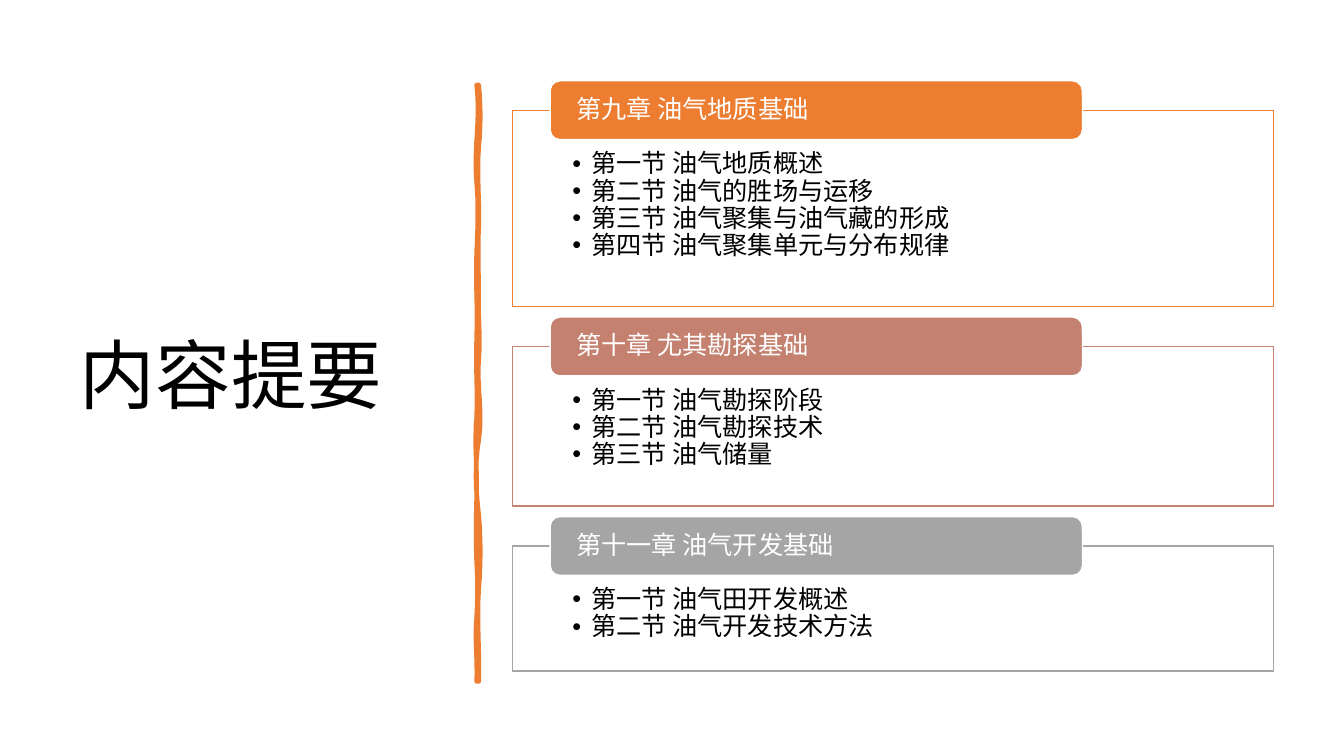
"""Build the contents slide: a title, a wavy divider and three chapter panels."""
from dataclasses import dataclass

from lxml.etree import SubElement
from pptx import Presentation
from pptx.dml.color import RGBColor
from pptx.enum.shapes import MSO_SHAPE as Preset
from pptx.enum.text import MSO_ANCHOR as Anchor, MSO_AUTO_SIZE as AutoSize, PP_ALIGN as Align
from pptx.oxml.ns import qn
from pptx.shapes.base import BaseShape
from pptx.slide import Slide
from pptx.text.text import TextFrame, _Paragraph as Paragraph
from pptx.util import Pt

PX = 9525
FINE = 10
FONT = "Noto Sans CJK SC"
ORANGE = RGBColor(0xED, 0x7D, 0x31)
ROSE = RGBColor(0xC4, 0x81, 0x70)
GRAY = RGBColor(0xA5, 0xA5, 0xA5)
WHITE = RGBColor(0xFF, 0xFF, 0xFF)
BLACK = RGBColor(0x00, 0x00, 0x00)

PANEL_LEFT, PANEL_WIDTH, FIRST_TOP, PANEL_GAP = 488, 725, 105, 38
TAB_LEFT, TAB_WIDTH, TAB_HEIGHT = 524, 507, 56
BULLET_INDENT = 18


@dataclass(frozen=True)
class Chapter:
    heading: str
    sections: tuple[str, ...]
    height: int
    color: RGBColor


@dataclass(frozen=True)
class Wave:
    first_bow: int
    second_bow: int
    end_y: int


CHAPTERS = (
    Chapter("第九章 油气地质基础",
            ("第一节 油气地质概述", "第二节 油气的胜场与运移",
             "第三节 油气聚集与油气藏的形成", "第四节 油气聚集单元与分布规律"), 187, ORANGE),
    Chapter("第十章 尤其勘探基础",
            ("第一节 油气勘探阶段", "第二节 油气勘探技术", "第三节 油气储量"), 152, ROSE),
    Chapter("第十一章 油气开发基础",
            ("第一节 油气田开发概述", "第二节 油气开发技术方法"), 119, GRAY),
)

DIVIDER_TOP, DIVIDER_BOTTOM = 81, 649
RIGHT_X, LEFT_X = 456, 454
RIGHT_EDGE = (Wave(2, 2, 140), Wave(-2, 1, 217), Wave(-1, 0, 282), Wave(-1, 2, 342),
              Wave(-2, 4, 419), Wave(-4, -3, 490), Wave(2, 2, 561), Wave(-2, 1, DIVIDER_BOTTOM))
LEFT_EDGE = (Wave(1, -2, 588), Wave(1, 1, 535), Wave(-1, 0, 458), Wave(0, -2, 398),
             Wave(1, -1, 322), Wave(1, -1, 240), Wave(1, 2, 174), Wave(-3, 4, DIVIDER_TOP))


def place(shape: BaseShape, left: int, top: int, width: int, height: int) -> None:
    """Position a shape in px."""
    shape.left, shape.top = left * PX, top * PX
    shape.width, shape.height = width * PX, height * PX


def set_frame(frame: TextFrame, anchor: Anchor, left: int, top: int, right: int, bottom: int) -> None:
    """Set wrapping, anchor and insets of a text frame."""
    frame.word_wrap = True
    frame.auto_size = AutoSize.NONE
    frame.vertical_anchor = anchor
    frame.margin_left, frame.margin_top = left * PX, top * PX
    frame.margin_right, frame.margin_bottom = right * PX, bottom * PX


def write(paragraph: Paragraph, text: str, size: int, color: RGBColor) -> None:
    """Add one formatted run to a left-aligned paragraph."""
    paragraph.alignment = Align.LEFT
    paragraph.line_spacing = 0.9
    paragraph.space_before = paragraph.space_after = Pt(0)
    run = paragraph.add_run()
    run.text = text
    run.font.size = Pt(size)
    run.font.bold = False
    run.font.color.rgb = color
    run.font.name = FONT
    SubElement(run.font._element, qn("a:ea"), typeface=FONT)


def add_bullet(paragraph: Paragraph) -> None:
    """Give a paragraph a hanging round bullet."""
    properties = paragraph._p.get_or_add_pPr()
    properties.set("marL", str(BULLET_INDENT * PX))
    properties.set("indent", str(-BULLET_INDENT * PX))
    SubElement(properties, qn("a:buFont"), typeface="Arial")
    SubElement(properties, qn("a:buChar"), char="•")


def trace_edge(x: int, start_y: int, waves: tuple[Wave, ...]) -> list[tuple[int, int]]:
    """Return fine-grid points along one wavy edge."""
    points = []
    steps = 8
    for wave in waves:
        for step in range(1, steps + 1):
            t = step / steps
            bow = 3 * t * (1 - t) * ((1 - t) * wave.first_bow + t * wave.second_bow)
            y = start_y + t * (wave.end_y - start_y)
            points.append((round((x + bow) * FINE), round(y * FINE)))
        start_y = wave.end_y
    return points


def draw_divider(slide: Slide) -> None:
    """Draw the hand-drawn vertical line."""
    builder = slide.shapes.build_freeform(RIGHT_X * FINE, DIVIDER_TOP * FINE, PX / FINE)
    builder.add_line_segments(trace_edge(RIGHT_X, DIVIDER_TOP, RIGHT_EDGE), close=False)
    builder.add_line_segments([(LEFT_X * FINE, DIVIDER_BOTTOM * FINE)], close=False)
    builder.add_line_segments(trace_edge(LEFT_X, DIVIDER_BOTTOM, LEFT_EDGE), close=True)
    divider = builder.convert_to_shape()
    divider.shadow.inherit = False
    divider.fill.solid()
    divider.fill.fore_color.rgb = ORANGE
    divider.line.color.rgb = ORANGE
    divider.line.width = Pt(3.25)


def draw_chapter(slide: Slide, panel: BaseShape, chapter: Chapter, top: int) -> None:
    """Fill a panel with the sections and put the heading tab on its top edge."""
    place(panel, PANEL_LEFT, top, PANEL_WIDTH, chapter.height)
    panel.fill.solid()
    panel.fill.fore_color.rgb = WHITE
    white = panel.fill._xPr.find(qn("a:solidFill")).find(qn("a:srgbClr"))
    SubElement(white, qn("a:alpha"), val="90000")
    panel.line.color.rgb = chapter.color
    panel.line.width = Pt(1)
    sections = panel.text_frame
    set_frame(sections, Anchor.TOP, 57, 39, 57, 13)
    for index, section in enumerate(chapter.sections):
        paragraph = sections.add_paragraph() if index else sections.paragraphs[0]
        paragraph.level = 1
        write(paragraph, section, 18, BLACK)
        add_bullet(paragraph)

    tab = slide.shapes.add_shape(Preset.ROUNDED_RECTANGLE, 0, 0, 0, 0)
    place(tab, TAB_LEFT, top - TAB_HEIGHT // 2, TAB_WIDTH, TAB_HEIGHT)
    tab.shadow.inherit = False
    tab.fill.solid()
    tab.fill.fore_color.rgb = chapter.color
    tab.line.color.rgb = WHITE
    tab.line.width = Pt(1)
    set_frame(tab.text_frame, Anchor.MIDDLE, 22, 0, 22, 0)
    write(tab.text_frame.paragraphs[0], chapter.heading, 18, WHITE)


def main() -> None:
    """Build and save the slide."""
    deck = Presentation()
    deck.slide_width, deck.slide_height = 1280 * PX, 720 * PX
    slide = deck.slides.add_slide(deck.slide_layouts.get_by_name("Comparison"))
    title, *panels = slide.placeholders
    place(title, 66, 67, 359, 587)
    set_frame(title.text_frame, Anchor.MIDDLE, 10, 5, 10, 5)
    write(title.text_frame.paragraphs[0], "内容提要", 54, BLACK)
    draw_divider(slide)

    top = FIRST_TOP
    for panel, chapter in zip(panels, CHAPTERS):
        draw_chapter(slide, panel, chapter, top)
        top += chapter.height + PANEL_GAP
    for spare in panels[len(CHAPTERS):]:
        spare.element.getparent().remove(spare.element)
    deck.save("out.pptx")


if __name__ == "__main__":
    main()
